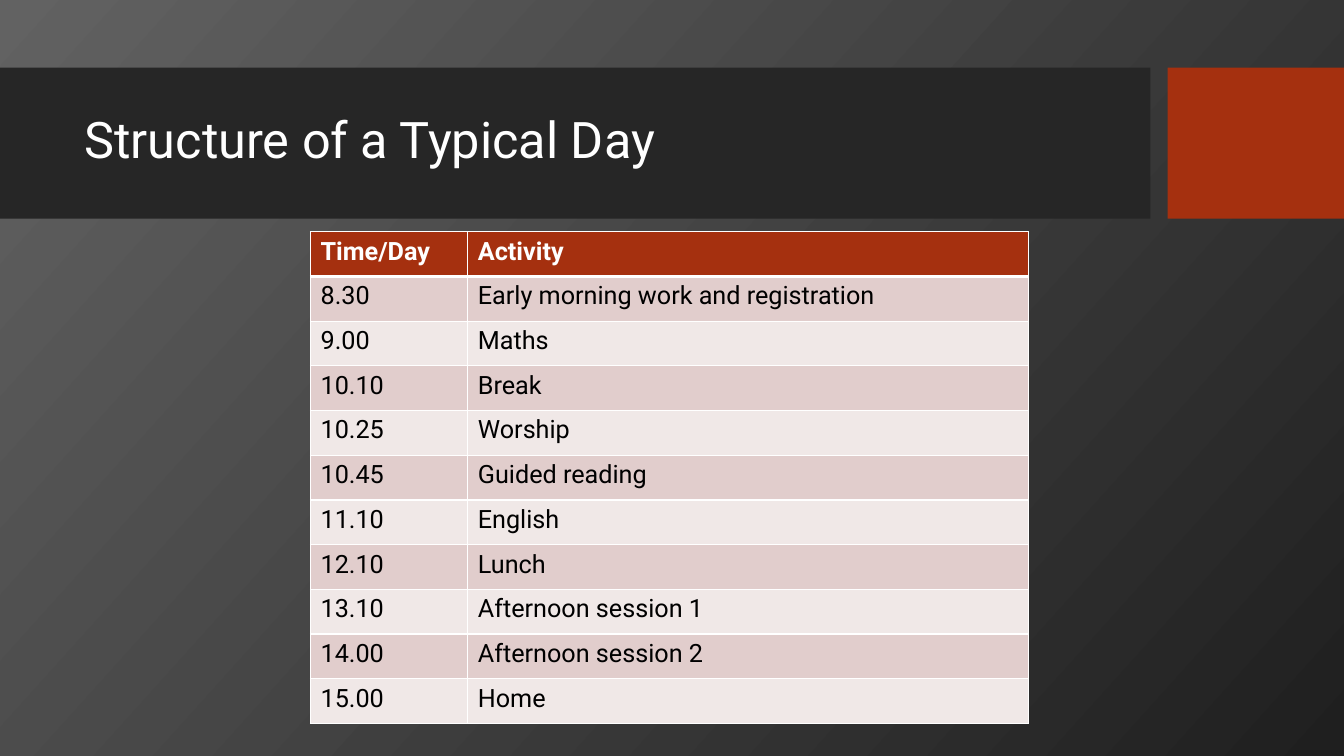
from lxml.etree import SubElement
from pptx import Presentation
from pptx.dml.color import RGBColor
from pptx.enum.shapes import MSO_SHAPE
from pptx.enum.text import MSO_ANCHOR
from pptx.oxml.ns import qn
from pptx.util import Inches, Pt

THEME = {
    "font": "Roboto",
    "title_size": 36,
    "table_size": 18,
    "back_light": "626262",
    "back_dark": "1F1F1F",
    "band": "262626",
    "accent": "A5300F",
    "white": "FFFFFF",
    "black": "000000",
    "rows": ("F0E8E7", "E1CDCC"),
}

TIMETABLE = [
    ("Time/Day", "Activity"),
    ("8.30", "Early morning work and registration"),
    ("9.00", "Maths"),
    ("10.10", "Break"),
    ("10.25", "Worship"),
    ("10.45", "Guided reading"),
    ("11.10", "English"),
    ("12.10", "Lunch"),
    ("13.10", "Afternoon session 1"),
    ("14.00", "Afternoon session 2"),
    ("15.00", "Home"),
]


def style_text(tf, size, color, bold=False):
    font = tf.paragraphs[0].runs[0].font
    font.name = THEME["font"]
    font.size = Pt(size)
    font.bold = bold
    font.color.rgb = RGBColor.from_string(color)


def add_border(cell, side, width):
    ln = SubElement(cell._tc.get_or_add_tcPr(), qn(f"a:ln{side}"), w=str(Pt(width)))
    fill = SubElement(ln, qn("a:solidFill"))
    SubElement(fill, qn("a:srgbClr"), val=THEME["white"])


prs = Presentation()
prs.slide_width = Inches(13.33)
prs.slide_height = Inches(7.5)
s = prs.slides.add_slide(prs.slide_layouts[6])

back = s.background.fill
back.gradient()
back.gradient_angle = 360 - 42
for stop, color in zip(back.gradient_stops, (THEME["back_light"], THEME["back_dark"])):
    stop.color.rgb = RGBColor.from_string(color)

band_top, band_height = Inches(0.67), Inches(1.5)
for left, width, color in [(0, 11.41, THEME["band"]), (11.58, 1.75, THEME["accent"])]:
    sp = s.shapes.add_shape(
        MSO_SHAPE.RECTANGLE, Inches(left), band_top, Inches(width), band_height
    )
    sp.shadow.inherit = False
    sp.fill.solid()
    sp.fill.fore_color.rgb = RGBColor.from_string(color)
    sp.line.fill.background()

title = s.shapes.add_textbox(Inches(0.74), Inches(0.82), Inches(10.51), Inches(1.18))
tf = title.text_frame
tf.word_wrap = True
tf.vertical_anchor = MSO_ANCHOR.MIDDLE
tf.text = "Structure of a Typical Day"
tf.paragraphs[0].line_spacing = 0.9
style_text(tf, THEME["title_size"], THEME["white"])

col_widths = (Inches(1.56), Inches(5.56))
table = s.shapes.add_table(
    len(TIMETABLE), len(col_widths), Inches(3.08), Inches(2.3), sum(col_widths), Inches(4.88)
).table
for col, width in zip(table.columns, col_widths):
    col.width = width

for i, row in enumerate(TIMETABLE):
    header = i == 0
    fill = THEME["accent"] if header else THEME["rows"][i % 2]
    color = THEME["white"] if header else THEME["black"]
    widths = {"L": 1, "R": 1, "T": 3 if i == 1 else 1, "B": 3 if header else 1}
    for j, text in enumerate(row):
        cell = table.cell(i, j)
        cell.text_frame.text = text
        style_text(cell.text_frame, THEME["table_size"], color, header)
        for side, width in widths.items():
            add_border(cell, side, width)
        cell.fill.solid()
        cell.fill.fore_color.rgb = RGBColor.from_string(fill)

prs.save("out.pptx")
